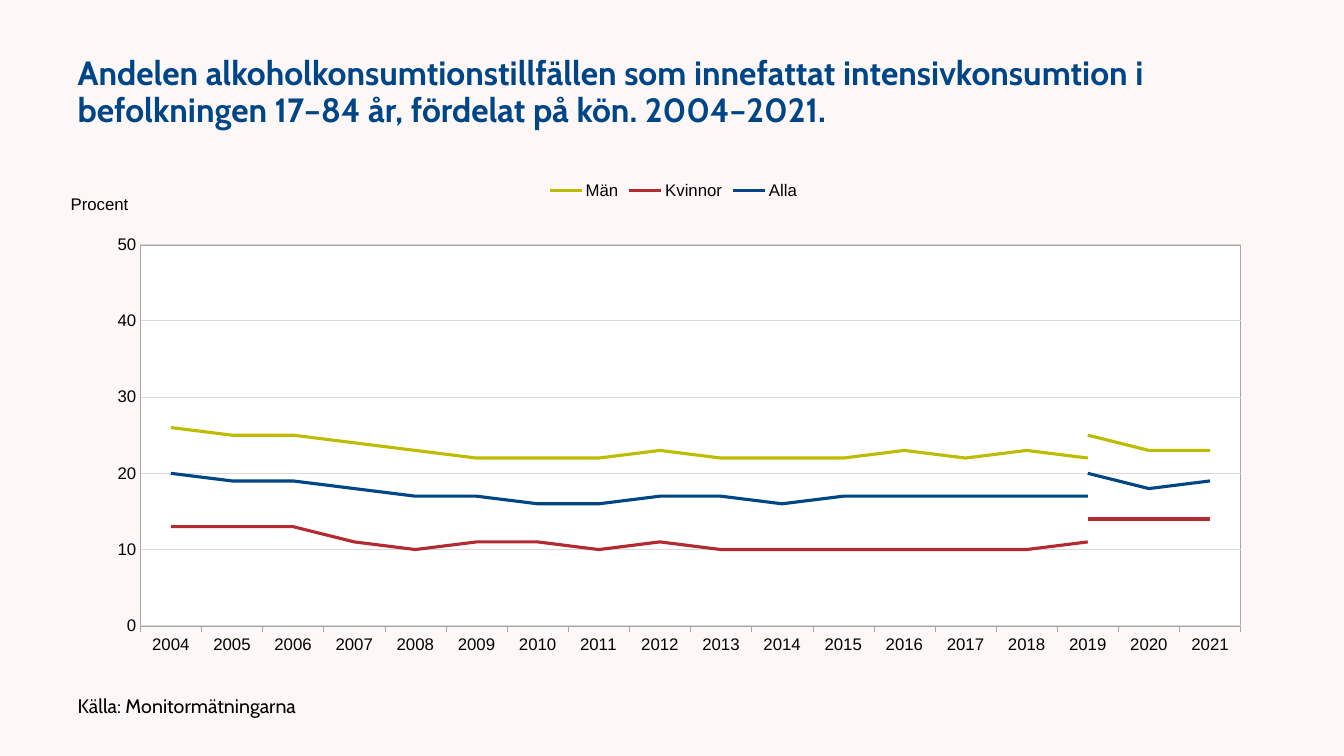
from lxml import etree
from pptx import Presentation
from pptx import util as u
from pptx.chart import data as chart_data
from pptx.dml.color import RGBColor
from pptx.enum import chart as ch
from pptx.enum import text
from pptx.oxml import parse_xml
from pptx.oxml.ns import nsdecls, qn

COLORS = {
    "background": "FEF7F7", "plot": "FFFFFF", "text": "000000",
    "axis": "A6A6A6", "grid": "D9D9D9",
    "Män": "BEBC00", "Kvinnor": "B32B31", "Alla": "004687",
}
YEARS = range(2004, 2022)
# For each group: shares 2004–2019, then the new series 2019–2021
SHARES = {
    "Män": ([26, 25, 25, 24, 23, 22, 22, 22, 23, 22, 22, 22, 23, 22, 23, 22],
            [25, 23, 23]),
    "Kvinnor": ([13, 13, 13, 11, 10, 11, 11, 10, 11, 10, 10, 10, 10, 10, 10, 11],
                [14, 14, 14]),
    "Alla": ([20, 19, 19, 18, 17, 17, 16, 16, 17, 17, 16, 17, 17, 17, 17, 17],
             [20, 18, 19]),
}
CHART_FONT = {"name": "Arial", "size": u.Pt(12), "bold": False}


def rgb(name):
    return RGBColor.from_string(COLORS[name])


def set_attributes(target, values):
    for name, value in values.items():
        setattr(target, name, value)


def set_font(font, values, color="text"):
    set_attributes(font, values)
    font.color.rgb = rgb(color)


def set_line(line, color, points):
    line.color.rgb = rgb(color)
    line.width = u.Pt(points)


def fill_placeholder(placeholder, box, words, font, color):
    """Move a placeholder to box and write one left-aligned, unbulleted paragraph."""
    left, top, width, height = (u.Inches(v) for v in box)
    set_attributes(placeholder, {"left": left, "top": top, "width": width, "height": height})
    frame = placeholder.text_frame
    frame.text = words
    set_attributes(frame, {"word_wrap": True, "auto_size": text.MSO_AUTO_SIZE.NONE,
                           "vertical_anchor": text.MSO_ANCHOR.MIDDLE})
    paragraph = frame.paragraphs[0]
    properties = paragraph._p.get_or_add_pPr()
    properties.set("marL", "0")
    properties.set("indent", "0")
    etree.SubElement(properties, qn("a:buNone"))
    set_attributes(paragraph, {"alignment": text.PP_ALIGN.LEFT, "line_spacing": 0.9,
                               "space_before": u.Pt(0)})
    set_font(paragraph.runs[0].font, font, color)


def place_in_chart(element, index, target=None, **fractions):
    """Give a chart part a manual layout in fractions of the chart."""
    for old in element.findall(qn("c:layout")):
        element.remove(old)
    layout = etree.Element(qn("c:layout"))
    manual = etree.SubElement(layout, qn("c:manualLayout"))
    if target:
        etree.SubElement(manual, qn("c:layoutTarget"), val=target)
    for key in ("x", "y"):
        etree.SubElement(manual, qn(f"c:{key}Mode"), val="edge")
    for key, value in fractions.items():
        etree.SubElement(manual, qn(f"c:{key}"), val=str(value))
    element.insert(index, layout)


def share_data():
    shares = chart_data.CategoryChartData(number_format="0")
    shares.categories = [str(year) for year in YEARS]
    for group, (earlier, later) in SHARES.items():
        shares.add_series(group, earlier + [None] * (len(YEARS) - len(earlier)))
        shares.add_series(f"Series {len(shares) + 1}",
                          [None] * (len(YEARS) - len(later)) + later)
    return shares


def format_axes(chart):
    years, percent = chart.category_axis, chart.value_axis
    for axis in (years, percent):
        set_font(axis.tick_labels.font, CHART_FONT)
        set_line(axis.format.line, "axis", 0.25)
        axis.minor_tick_mark = ch.XL_TICK_MARK.NONE
    years.major_tick_mark = ch.XL_TICK_MARK.OUTSIDE
    set_attributes(percent, {"minimum_scale": 0, "maximum_scale": 50, "major_unit": 10,
                             "has_major_gridlines": True,
                             "major_tick_mark": ch.XL_TICK_MARK.NONE})
    set_line(percent.major_gridlines.format.line, "grid", 0.75)
    set_attributes(percent.tick_labels, {"number_format": "0",
                                         "number_format_is_linked": False})
    for between in chart.element.xpath(".//c:valAx/c:crossBetween"):
        between.set("val", "midCat")

    title = percent.axis_title
    title.text_frame.text = "Procent"
    set_font(title.text_frame.paragraphs[0].runs[0].font, CHART_FONT)
    for body in title.element.xpath(".//a:bodyPr"):
        body.set("rot", "0")
        body.set("vert", "horz")
    place_in_chart(title.element, 1, x=0, y=0.04)


def format_legend(chart):
    chart.has_legend = True
    set_attributes(chart.legend, {"position": ch.XL_LEGEND_POSITION.TOP,
                                  "include_in_layout": False})
    set_font(chart.legend.font, CHART_FONT)
    legend = chart.element.xpath(".//c:legend")[0]
    for place, hidden in enumerate(range(1, 2 * len(SHARES), 2), start=1):
        entry = etree.Element(qn("c:legendEntry"))
        etree.SubElement(entry, qn("c:idx"), val=str(hidden))
        etree.SubElement(entry, qn("c:delete"), val="1")
        legend.insert(place, entry)


def format_plot(chart):
    plot = chart.plots[0]
    plot.vary_by_categories = False
    groups = list(SHARES)
    for number, series in enumerate(plot.series):
        series.smooth = False
        series.marker.style = ch.XL_MARKER_STYLE.NONE
        set_line(series.format.line, groups[number // 2], 2.25)
    area = chart.element.xpath(".//c:plotArea")[0]
    place_in_chart(area, 0, target="inner", x=0.06, y=0.149, w=0.908, h=0.764)
    area.append(parse_xml(
        f'<c:spPr {nsdecls("c", "a")}>'
        f'<a:solidFill><a:srgbClr val="{COLORS["plot"]}"/></a:solidFill>'
        f'<a:ln w="{u.Pt(0.25)}"><a:solidFill><a:srgbClr val="{COLORS["axis"]}"/>'
        '</a:solidFill></a:ln></c:spPr>'))


def add_share_chart(slide, box):
    chart = slide.shapes.add_chart(ch.XL_CHART_TYPE.LINE, *(u.Inches(v) for v in box),
                                   share_data()).chart
    chart.has_title = False
    set_font(chart.font, CHART_FONT)
    format_axes(chart)
    format_legend(chart)
    format_plot(chart)


def main():
    deck = Presentation()
    deck.slide_width, deck.slide_height = u.Inches(13.33), u.Inches(7.5)
    slide = deck.slides.add_slide(deck.slide_layouts[1])
    slide.background.fill.solid()
    slide.background.fill.fore_color.rgb = rgb("background")
    fill_placeholder(
        slide.shapes.title, (0.67, 0.3, 12, 1.25),
        "Andelen alkoholkonsumtionstillfällen som innefattat intensivkonsumtion i "
        "befolkningen 17–84 år, fördelat på kön. 2004–2021.",
        {"name": "Cabin", "size": u.Pt(24), "bold": True}, "Alla")
    fill_placeholder(
        slide.placeholders[1], (0.67, 6.83, 6, 0.37), "Källa: Monitormätningarna",
        {"name": "Cabin", "size": u.Pt(14)}, "text")
    add_share_chart(slide, (0.67, 1.69, 12.02, 4.95))
    deck.save("out.pptx")


if __name__ == "__main__":
    main()
